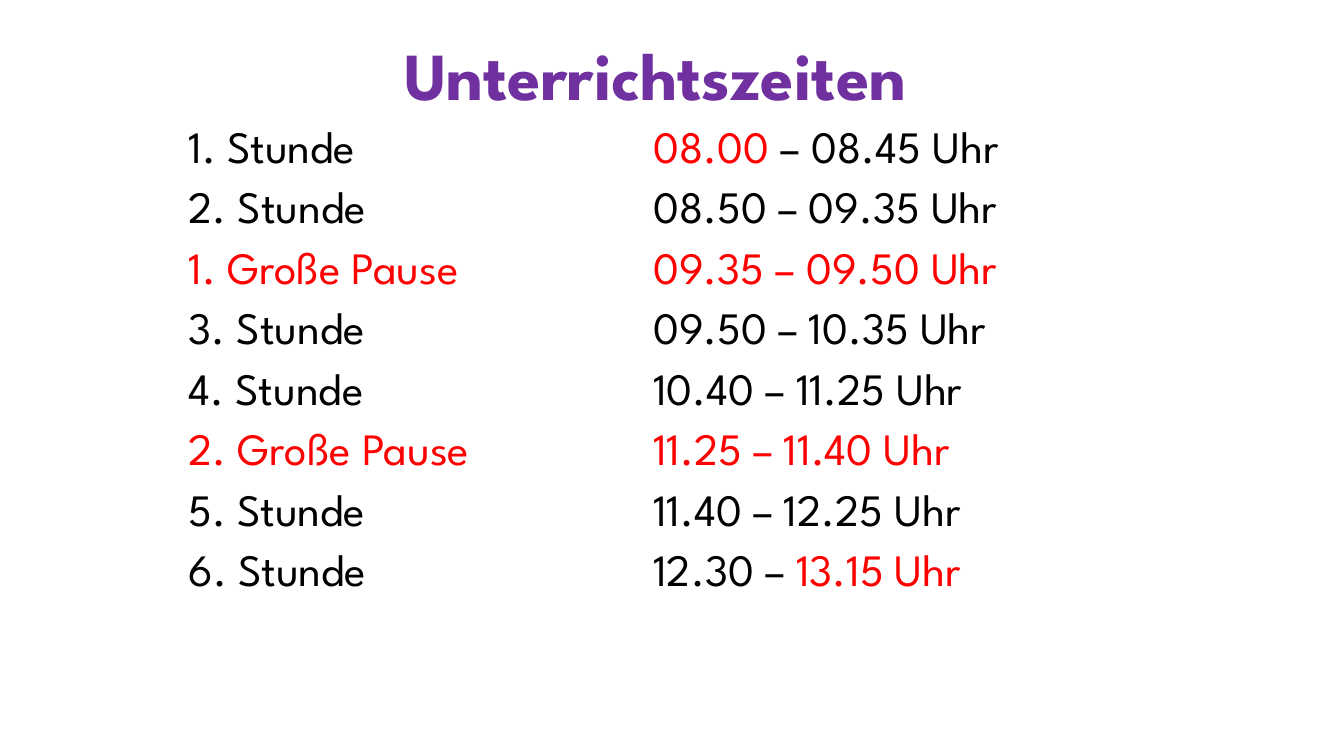
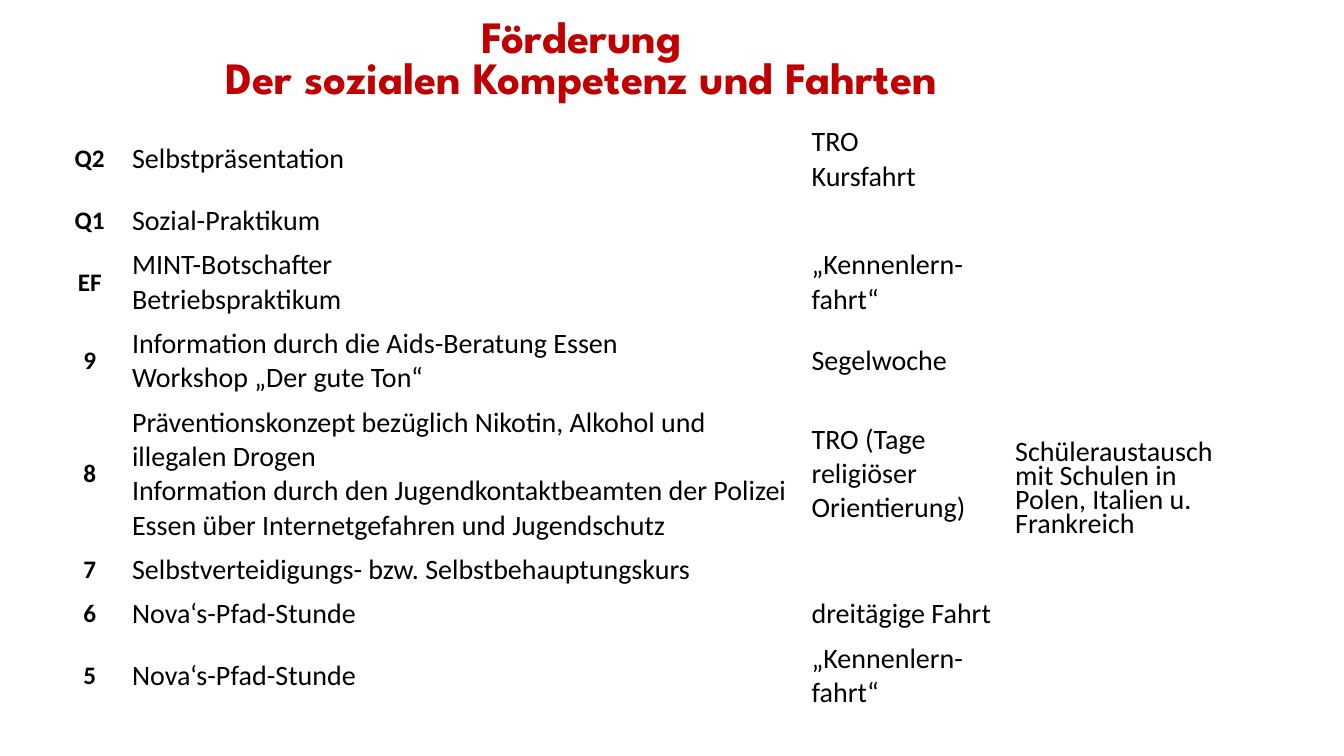
from pptx import Presentation
from pptx.dml.color import RGBColor
from pptx.enum.text import MSO_ANCHOR as Anchor, PP_ALIGN as Align
from pptx.util import Inches, Pt

COLORS = {"white": "FFFFFF", "text": "000000", "accent": "FF0000",
          "purple": "7030A0", "crimson": "C00000"}
TITLE_FONT = "League Spartan"
BODY_FONT = "Calibri"

# A time is a list of (text, colour) runs.
LESSONS = [
    ("1. Stunde", "text", [("08.00 ", "accent"), ("– 08.45 Uhr", "text")]),
    ("2. Stunde", "text", [("08.50 – 09.35 Uhr", "text")]),
    ("1. Große Pause", "accent", [("09.35 – 09.50 Uhr", "accent")]),
    ("3. Stunde", "text", [("09.50 – 10.35 Uhr", "text")]),
    ("4. Stunde", "text", [("10.40 – 11.25 Uhr", "text")]),
    ("2. Große Pause", "accent", [("11.25 – 11.40 Uhr", "accent")]),
    ("5. Stunde", "text", [("11.40 – 12.25 Uhr", "text")]),
    ("6. Stunde", "text", [("12.30 – ", "text"), ("13.15 Uhr", "accent")]),
]

# Grade, activities, trip, row height
GRADES = [
    ("Q2", "Selbstpräsentation", "TRO\nKursfahrt", 0.69),
    ("Q1", "Sozial-Praktikum", "", 0.39),
    ("EF", "MINT-Botschafter\nBetriebspraktikum", "„Kennenlern- fahrt“", 0.69),
    ("9", "Information durch die Aids-Beratung Essen\nWorkshop „Der gute Ton“",
     "Segelwoche", 0.69),
    ("8", "Präventionskonzept bezüglich Nikotin, Alkohol und illegalen Drogen\n"
     "Information durch den Jugendkontaktbeamten der Polizei Essen über "
     "Internetgefahren und Jugendschutz",
     "TRO (Tage religiöser Orientierung)", 1.28),
    ("7", "Selbstverteidigungs- bzw. Selbstbehauptungskurs", "", 0.39),
    ("6", "Nova‘s-Pfad-Stunde", "dreitägige Fahrt", 0.39),
    ("5", "Nova‘s-Pfad-Stunde", "„Kennenlern-fahrt“", 0.69),
]
EXCHANGE = "Schüleraustausch mit Schulen in Polen, Italien u. Frankreich"
EXCHANGE_ROWS = (4, 6)


def rgb(name):
    return RGBColor.from_string(COLORS[name])


def add_plain_table(prs, left, top, widths, heights):
    """Add a slide with a white, unbanded table."""
    s = prs.slides.add_slide(prs.slide_layouts[6])
    table = s.shapes.add_table(
        len(heights), len(widths), Inches(left), Inches(top),
        Inches(sum(widths)), Inches(sum(heights))).table
    table.first_row = table.horz_banding = False
    for column, width in zip(table.columns, widths):
        column.width = Inches(width)
    for row, height in zip(table.rows, heights):
        row.height = Inches(height)
    for cell in table.iter_cells():
        cell.fill.solid()
        cell.fill.fore_color.rgb = rgb("white")
    return table


def style_font(font, name, size, color, bold=False):
    font.name, font.size, font.bold = name, Pt(size), bold
    font.color.rgb = rgb(color)


def write_cell(cell, text, font, size, color="text", bold=False,
               align=Align.LEFT, anchor=Anchor.MIDDLE):
    cell.vertical_anchor = anchor
    cell.text_frame.text = text
    for p in cell.text_frame.paragraphs:
        p.alignment = align
        for r in p.runs:
            style_font(r.font, font, size, color, bold)


def write_runs(cell, runs, font, size):
    p = cell.text_frame.paragraphs[0]
    for text, color in runs:
        r = p.add_run()
        r.text = text
        style_font(r.font, font, size, color)


def write_title(table, last_column, text, size, color, anchor):
    cell = table.cell(0, 0)
    cell.merge(table.cell(0, last_column))
    write_cell(cell, text, TITLE_FONT, size, color, True, Align.CENTER, anchor)
    return cell


def add_lesson_times(prs):
    table = add_plain_table(prs, 1.77, 0.41, [4.61, 4.85],
                            [0.85] + [0.6] * len(LESSONS))
    write_title(table, 1, "Unterrichtszeiten", 48, "purple", Anchor.MIDDLE)
    for row, (label, color, time) in enumerate(LESSONS, 1):
        write_runs(table.cell(row, 0), [(label, color)], TITLE_FONT, 32)
        write_runs(table.cell(row, 1), time, TITLE_FONT, 32)


def add_social_skills(prs):
    table = add_plain_table(prs, 0.57, 0.17, [0.64, 6.74, 2.02, 2.39],
                            [1.02] + [grade[-1] for grade in GRADES])
    title = write_title(table, 2, "Förderung\nDer sozialen Kompetenz und Fahrten",
                        32, "crimson", Anchor.TOP)
    title.margin_left = Inches(1.1)
    for row, (grade, activities, trip, _) in enumerate(GRADES, 1):
        write_cell(table.cell(row, 0), grade, BODY_FONT, 18, bold=True,
                   align=Align.CENTER)
        write_cell(table.cell(row, 1), activities, BODY_FONT, 20)
        write_cell(table.cell(row, 2), trip, BODY_FONT, 20)

    first, last = EXCHANGE_ROWS
    exchange = table.cell(first, 3)
    exchange.merge(table.cell(last, 3))
    write_cell(exchange, EXCHANGE, BODY_FONT, 20, anchor=Anchor.TOP)
    exchange.margin_top = Inches(1.2)
    exchange.text_frame.paragraphs[0].line_spacing = 0.7


def main():
    prs = Presentation()
    prs.slide_width, prs.slide_height = Inches(13.33), Inches(7.5)
    add_lesson_times(prs)
    add_social_skills(prs)
    prs.save("out.pptx")


if __name__ == "__main__":
    main()
